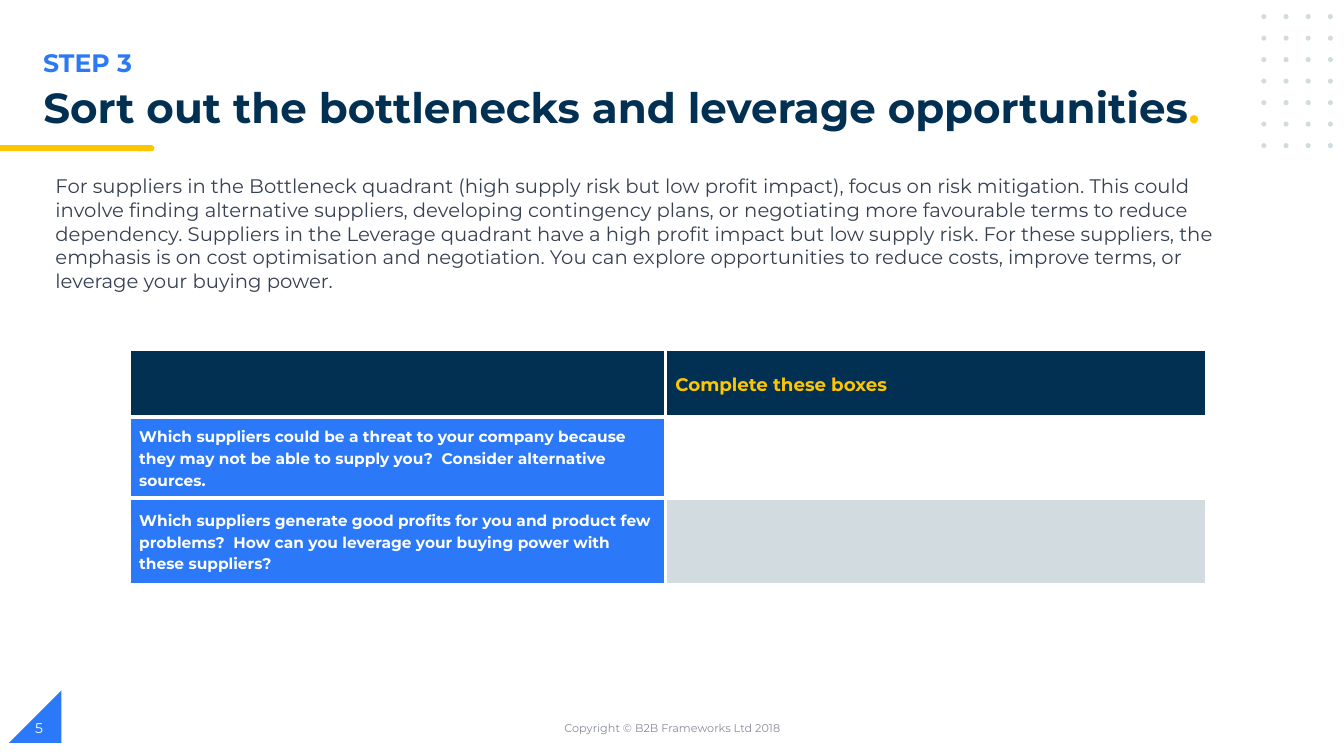
"""Build the Step 3 slide on bottleneck and leverage suppliers."""
import lxml.etree
import pptx
import pptx.dml.color
import pptx.enum.shapes
import pptx.enum.text
import pptx.oxml
import pptx.oxml.ns
import pptx.util

Inches = pptx.util.Inches
Shapes = pptx.enum.shapes.MSO_SHAPE
Anchor = pptx.enum.text.MSO_ANCHOR
Align = pptx.enum.text.PP_ALIGN
NAVY, BLUE, YELLOW, PALE, WHITE = "023053", "2B79F8", "FFC600", "D1DBE0", "FFFFFF"


def color(value):
    return pptx.dml.color.RGBColor.from_string(value)


def write(frame, spans, size, bold=False, anchor=Anchor.TOP, inset=0.05, **layout):
    """Fill a text frame with one paragraph of (text, colour) spans."""
    settings = {"word_wrap": True, "vertical_anchor": anchor,
                "margin_left": Inches(0.1), "margin_right": Inches(0.1),
                "margin_top": Inches(inset), "margin_bottom": Inches(inset)}
    for name, value in settings.items():
        setattr(frame, name, value)
    para = frame.paragraphs[0]
    formats = {"alignment": Align.LEFT, "line_spacing": 1.0, "space_before": pptx.util.Pt(0)}
    for name, value in {**formats, **layout}.items():
        setattr(para, name, value)
    for text, shade in spans:
        span = para.add_run()
        span.text = text
        for name, value in {"name": "Montserrat", "size": pptx.util.Pt(size), "bold": bold}.items():
            setattr(span.font, name, value)
        span.font.color.rgb = color(shade)


deck = pptx.Presentation()
deck.slide_width, deck.slide_height = Inches(13.33), Inches(7.5)
page = deck.slides.add_slide(deck.slide_layouts[1])

decorations = [
    (Shapes.RIGHT_TRIANGLE, 0.09, 6.85, 0.52, 0.52, BLUE),
    (Shapes.FLOWCHART_TERMINATOR, 1.34, 1.44, 0.19, 0.06, YELLOW),
    (Shapes.RECTANGLE, 0, 1.44, 1.41, 0.06, YELLOW),
]
for row in range(7):
    for column in range(4):
        decorations.append((Shapes.OVAL, 12.51 + 0.22 * column, 0.14 + 1.28 * row / 6,
                            0.05, 0.05, PALE))
for kind, left, top, width, height, shade in decorations:
    shape = page.shapes.add_shape(kind, Inches(left), Inches(top), Inches(width), Inches(height))
    shape.shadow.inherit = False
    shape.fill.solid()
    shape.fill.fore_color.rgb = color(shade)
    shape.line.fill.background()
    if kind == Shapes.RIGHT_TRIANGLE:
        shape._element.spPr.xfrm.set("flipH", "1")

title, body = page.placeholders
places = [(title, 0.33, 0.82, 12.17, 0.56), (body, 0.45, 1.68, 11.78, 1.28)]
for holder, left, top, width, height in places:
    holder.left, holder.top = Inches(left), Inches(top)
    holder.width, holder.height = Inches(width), Inches(height)
    holder.text_frame.auto_size = pptx.enum.text.MSO_AUTO_SIZE.NONE

write(title.text_frame, [("Sort out the bottlenecks and leverage opportunities", NAVY),
                         (".", YELLOW)], 30, bold=True, line_spacing=0.9)

properties = body.text_frame.paragraphs[0]._p.get_or_add_pPr()
properties.set("marL", "0")
properties.set("indent", "0")
lxml.etree.SubElement(properties, pptx.oxml.ns.qn("a:buNone"))
write(body.text_frame, [(
    "For suppliers in the Bottleneck quadrant (high supply risk but low profit impact), focus on "
    "risk mitigation. This could involve finding alternative suppliers, developing contingency "
    "plans, or negotiating more favourable terms to reduce dependency. Suppliers in the Leverage "
    "quadrant have a high profit impact but low supply risk. For these suppliers, the emphasis is "
    "on cost optimisation and negotiation. You can explore opportunities to reduce costs, improve "
    "terms, or leverage your buying power.", "374151")], 14)

labels = [
    ("STEP 3", 0.33, 0.42, 6.69, 18, BLUE, True, Anchor.TOP, Align.LEFT),
    ("Copyright © B2B Frameworks Ltd 2018", 4.42, 7.02, 4.5, 8, "888C97", False,
     Anchor.MIDDLE, Align.CENTER),
    ("5", 0.25, 7.02, 3, 10, WHITE, False, Anchor.MIDDLE, Align.LEFT),
]
for text, left, top, width, size, shade, bold, anchor, align in labels:
    box = page.shapes.add_textbox(Inches(left), Inches(top), Inches(width), Inches(0.4))
    write(box.text_frame, [(text, shade)], size, bold, anchor, alignment=align)

widths, heights = [5.32, 5.37], [0.68, 0.8, 0.86]
rows = [
    [("", NAVY), ("Complete these boxes", NAVY)],
    [("Which suppliers could be a threat to your company because they may not be able to "
      "supply you?  Consider alternative sources.", BLUE), ("", WHITE)],
    [("Which suppliers generate good profits for you and product few problems?  How can you "
      "leverage your buying power with these suppliers?", BLUE), ("", PALE)],
]
table = page.shapes.add_table(3, 2, Inches(1.28), Inches(3.46),
                              Inches(sum(widths)), Inches(sum(heights))).table
for column, width in zip(table.columns, widths):
    column.width = Inches(width)
for line, height, cells in zip(table.rows, heights, rows):
    line.height = Inches(height)
    for cell, (text, shade) in zip(line.cells, cells):
        cell.fill.solid()
        cell.fill.fore_color.rgb = color(shade)
        for index, side in enumerate(["lnL", "lnR", "lnT", "lnB"]):
            border = pptx.oxml.parse_xml(
                f'<a:{side} {pptx.oxml.ns.nsdecls("a")} w="38100"><a:solidFill>'
                f'<a:srgbClr val="{WHITE}"/></a:solidFill></a:{side}>')
            cell._tc.get_or_add_tcPr().insert(index, border)
        if text:
            size, ink = (13, YELLOW) if shade == NAVY else (11, WHITE)
            write(cell.text_frame, [(text, ink)], size, bold=True, inset=0, line_spacing=1.15)
            cell.vertical_anchor = Anchor.MIDDLE
            cell.margin_left = cell.margin_right = Inches(0.1)
            cell.margin_top = cell.margin_bottom = 0

deck.save("out.pptx")
